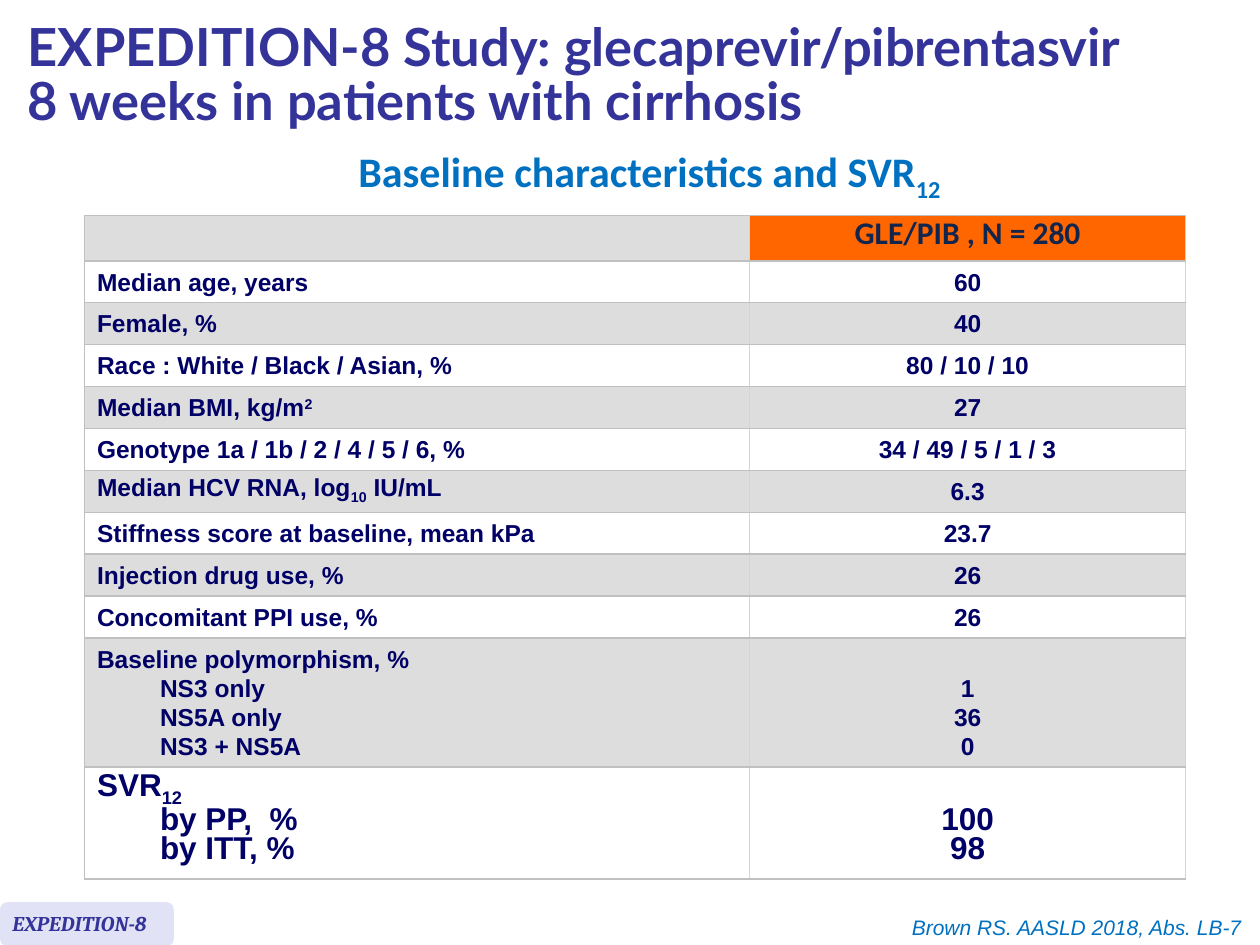
from dataclasses import dataclass
from typing import Any

import lxml.etree
import pptx
import pptx.dml.color
import pptx.enum.shapes
import pptx.enum.text
import pptx.oxml.ns
import pptx.util

ALIGN = pptx.enum.text.PP_ALIGN
ANCHOR = pptx.enum.text.MSO_ANCHOR
SLIDE_WIDTH = pptx.util.Inches(10)
SLIDE_HEIGHT = pptx.util.Inches(7.5)
GRID_COLUMNS, GRID_ROWS = 100, 75
SUPERSCRIPT, SUBSCRIPT = 30000, -25000


@dataclass(frozen=True)
class Style:
    size: float
    name: str
    color: str
    bold: bool = True
    italic: bool = False


@dataclass(frozen=True)
class Theme:
    title: Style = Style(30, "Lato", "333399")
    subtitle: Style = Style(24, "Calibri", "0070C0")
    header: Style = Style(18, "Calibri", "12254C")
    body: Style = Style(14, "Arial", "000066")
    result: Style = Style(18, "Arial", "000066")
    study: Style = Style(12, "Cambria", "333399", italic=True)
    citation: Style = Style(12, "Arial", "0070C0", bold=False, italic=True)
    header_fill: str = "FF6600"
    stripe: str = "DDDDDD"
    plain: str = "FFFFFF"
    badge: str = "E2E2F6"
    row_rule: str = "C0C0C0"
    column_rule: str = "D0D0F0"
    table_leading: float = 16.6
    subtitle_leading: float = 15.2


@dataclass(frozen=True)
class Area:
    column: float
    row: float
    columns: float
    rows: float

    def box(self) -> tuple[int, int, int, int]:
        return across(self.column), down(self.row), across(self.columns), down(self.rows)


@dataclass(frozen=True)
class Span:
    text: str
    baseline: int = 0


@dataclass(frozen=True)
class Line:
    spans: tuple[Span, ...]
    indented: bool = False


@dataclass(frozen=True)
class Characteristic:
    label: tuple[Line, ...]
    values: tuple[Line, ...]
    rows: float = 3.33
    style: Style = Theme.body
    bottom_inset: float = 0.5


def across(columns: float) -> int:
    return round(SLIDE_WIDTH * columns / GRID_COLUMNS)


def down(rows: float) -> int:
    return round(SLIDE_HEIGHT * rows / GRID_ROWS)


def line(*parts: str | Span, indented: bool = False) -> Line:
    return Line(tuple(p if isinstance(p, Span) else Span(p) for p in parts), indented)


def simple(label: str, value: str) -> Characteristic:
    return Characteristic((line(label),), (line(value),))


def rgb(value: str) -> pptx.dml.color.RGBColor:
    return pptx.dml.color.RGBColor.from_string(value)


def apply(target: Any, values: dict[str, Any]) -> None:
    for attribute, value in values.items():
        setattr(target, attribute, value)


def write(frame: Any, lines: tuple[Line, ...], style: Style, align: Any = ALIGN.LEFT,
          leading: Any = None) -> None:
    for index, content in enumerate(lines):
        paragraph = frame.paragraphs[0] if index == 0 else frame.add_paragraph()
        apply(paragraph, {"alignment": align, "line_spacing": leading,
                          "level": int(content.indented)})
        if content.indented:
            properties = paragraph._p.get_or_add_pPr()
            properties.set("marL", str(across(5)))
            properties.set("indent", "0")
        for span in content.spans:
            run = paragraph.add_run()
            run.text = span.text
            apply(run.font, {"size": pptx.util.Pt(style.size), "name": style.name,
                             "bold": style.bold, "italic": style.italic})
            run.font.color.rgb = rgb(style.color)
            if span.baseline:
                run._r.get_or_add_rPr().set("baseline", str(span.baseline))


def add_label(shapes: Any, area: Area, content: Line, style: Style,
              align: Any = ALIGN.LEFT, leading: Any = None) -> None:
    frame = shapes.add_textbox(*area.box()).text_frame
    frame.word_wrap = True
    write(frame, (content,), style, align, leading)


def rule_cell(cell: Any, left: str, theme: Theme) -> None:
    properties = cell._tc.get_or_add_tcPr()
    edges = {"L": left, "R": theme.column_rule, "T": theme.row_rule, "B": theme.row_rule}
    for side, color in edges.items():
        edge = lxml.etree.SubElement(properties, pptx.oxml.ns.qn(f"a:ln{side}"),
                                     w=str(pptx.util.Pt(1)))
        fill = lxml.etree.SubElement(edge, pptx.oxml.ns.qn("a:solidFill"))
        lxml.etree.SubElement(fill, pptx.oxml.ns.qn("a:srgbClr"), val=color)


def fill_cell(cell: Any, lines: tuple[Line, ...], style: Style, fill: str,
              is_value: bool, theme: Theme) -> None:
    rule_cell(cell, theme.column_rule if is_value else theme.row_rule, theme)
    cell.fill.solid()
    cell.fill.fore_color.rgb = rgb(fill)
    apply(cell, {"vertical_anchor": ANCHOR.MIDDLE, "margin_left": across(1),
                 "margin_right": across(1), "margin_top": down(0.5),
                 "margin_bottom": down(0.5)})
    write(cell.text_frame, lines, style, ALIGN.CENTER if is_value else ALIGN.LEFT,
          pptx.util.Pt(theme.table_leading))


def add_characteristics(shapes: Any, area: Area, header: str,
                        entries: tuple[Characteristic, ...], theme: Theme) -> None:
    table = shapes.add_table(len(entries) + 1, 2, *area.box()).table
    apply(table, {"first_row": False, "horz_banding": False})
    for column, width in zip(table.columns, (52.8, 34.6)):
        column.width = across(width)
    table.rows[0].height = down(3.6)
    corner = table.cell(0, 0)
    fill_cell(corner, (), theme.header, theme.stripe, False, theme)
    apply(corner, {"margin_top": 0, "margin_bottom": 0})
    fill_cell(table.cell(0, 1), (line(header),), theme.header, theme.header_fill, True, theme)
    for index, entry in enumerate(entries, start=1):
        table.rows[index].height = down(entry.rows)
        fill = theme.plain if index % 2 else theme.stripe
        for column, lines in enumerate((entry.label, entry.values)):
            fill_cell(table.cell(index, column), lines, entry.style, fill, column == 1, theme)
        if len(entry.values) < len(entry.label):
            apply(table.cell(index, 1), {"vertical_anchor": ANCHOR.BOTTOM,
                                         "margin_bottom": down(entry.bottom_inset)})


def add_badge(shapes: Any, theme: Theme) -> None:
    group = shapes.add_group_shape().shapes
    plate = group.add_shape(pptx.enum.shapes.MSO_SHAPE.ROUNDED_RECTANGLE,
                            *Area(0, 71.6, 13.8, 3.5).box())
    plate.shadow.inherit = False
    plate.fill.solid()
    plate.fill.fore_color.rgb = rgb(theme.badge)
    plate.line.fill.background()
    add_label(group, Area(0, 71.8, 13.8, 3), line("EXPEDITION-8"), theme.study)


CHARACTERISTICS = (
    simple("Median age, years", "60"),
    simple("Female, %", "40"),
    simple("Race : White / Black / Asian, %", "80 / 10 / 10"),
    Characteristic((line("Median BMI, kg/m", Span("2", SUPERSCRIPT)),), (line("27"),)),
    simple("Genotype 1a / 1b / 2 / 4 / 5 / 6, %", "34 / 49 / 5 / 1 / 3"),
    Characteristic((line("Median HCV RNA, log", Span("10", SUBSCRIPT), " IU/mL"),),
                   (line("6.3"),)),
    simple("Stiffness score at baseline, mean kPa", "23.7"),
    simple("Injection drug use, %", "26"),
    simple("Concomitant PPI use, %", "26"),
    Characteristic((line("Baseline polymorphism, %"), line("NS3 only", indented=True),
                    line("NS5A only", indented=True), line("NS3 + NS5A", indented=True)),
                   (line("1"), line("36"), line("0")), 10.2),
    Characteristic((line("SVR", Span("12", SUBSCRIPT)), line("by PP,  %", indented=True),
                    line("by ITT, %", indented=True)),
                   (line("100"), line("98")), 8.9, Theme.result, 1),
)


def main() -> None:
    theme = Theme()
    deck = pptx.Presentation()
    apply(deck, {"slide_width": SLIDE_WIDTH, "slide_height": SLIDE_HEIGHT})
    slide = deck.slides.add_slide(deck.slide_layouts[5])
    shapes = slide.shapes
    add_characteristics(shapes, Area(6.7, 17.1, 87.4, 52.8), "GLE/PIB , N = 280",
                        CHARACTERISTICS, theme)
    add_label(shapes, Area(4.3, 13.5, 94.5, 3.5),
              line("Baseline characteristics and SVR", Span("12", SUBSCRIPT)),
              theme.subtitle, ALIGN.CENTER, pptx.util.Pt(theme.subtitle_leading))
    title = shapes.title
    apply(title, dict(zip(("left", "top", "width", "height"), Area(1.2, 0.8, 93.7, 10.7).box())))
    apply(title.text_frame, {"word_wrap": True, "vertical_anchor": ANCHOR.MIDDLE,
                             "auto_size": pptx.enum.text.MSO_AUTO_SIZE.NONE})
    write(title.text_frame, (line("EXPEDITION-8 Study: glecaprevir/pibrentasvir "),),
          theme.title, leading=0.85)
    title.text_frame.paragraphs[0].add_line_break()
    write(title.text_frame, (line("8 weeks in patients with cirrhosis"),),
          theme.title, leading=0.85)
    add_badge(shapes, theme)
    add_label(shapes, Area(26.4, 72.1, 73.6, 3), line("Brown RS. AASLD 2018, Abs. LB-7 "),
              theme.citation, ALIGN.RIGHT)
    deck.save("out.pptx")


if __name__ == "__main__":
    main()
